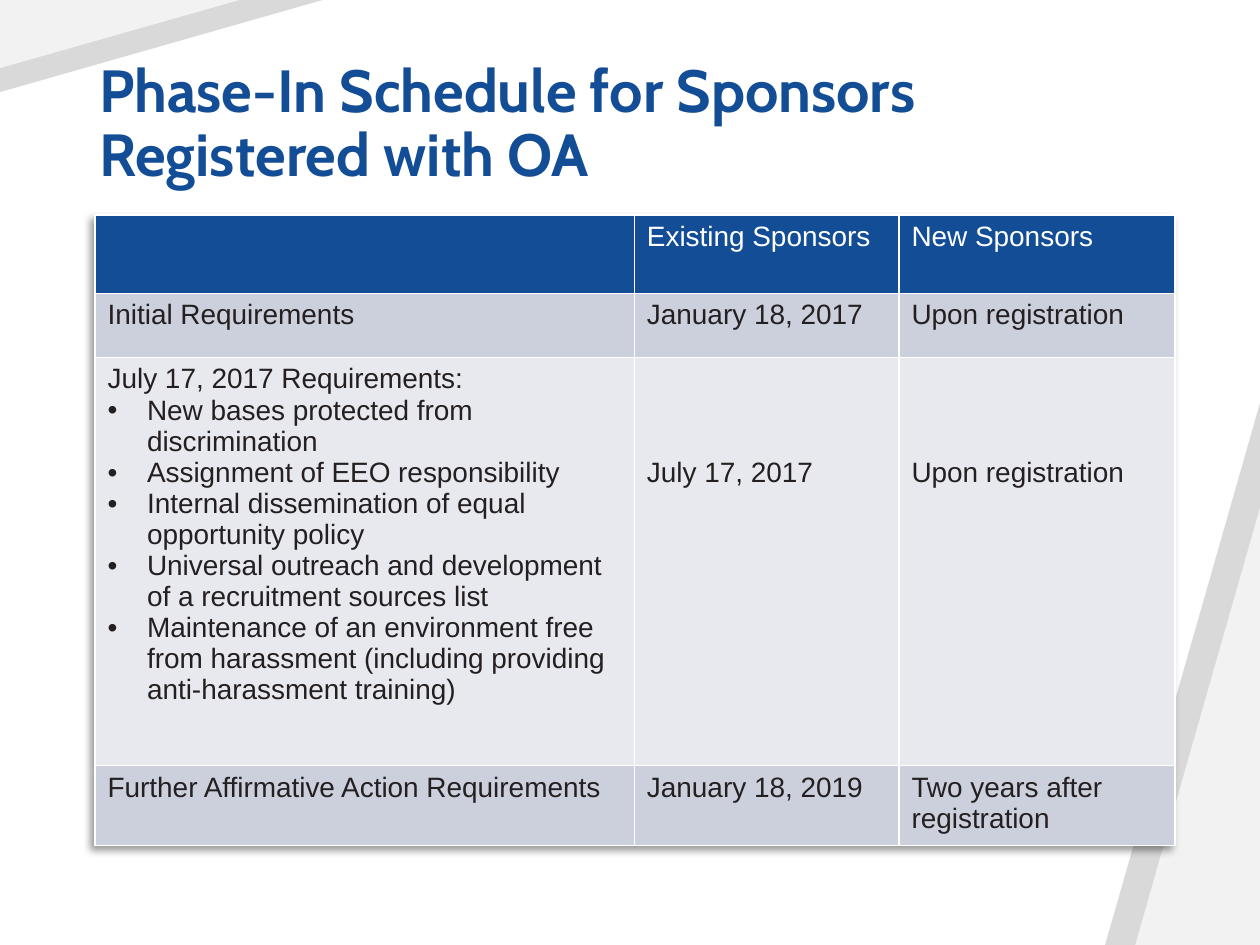
from typing import NamedTuple

from lxml.etree import SubElement as Sub
from pptx import Presentation
from pptx.dml.color import RGBColor
from pptx.enum.shapes import MSO_SHAPE as Kind
from pptx.enum.text import MSO_ANCHOR as Anchor
from pptx.oxml import parse_xml
from pptx.oxml.ns import nsdecls, qn
from pptx.util import Pt

WIDE, HIGH = 720, 540
BLUE, INK, WHITE = "124D95", "242021", "FFFFFF"


class Wedge(NamedTuple):
    """A right triangle filling the bottom right or, turned, the top left corner."""
    wide: float
    high: float
    fill: str
    turned: bool = False


class Row(NamedTuple):
    """A table row with its cell texts; drop lowers the text after column one."""
    high: float
    fill: str
    ink: str
    texts: tuple[str, str, str]
    points: tuple[str, ...] = ()
    drop: float = 0


WEDGES = [
    Wedge(88.5, 309.6, "D9D9D9"),
    Wedge(71.3, 249.8, "F2F2F2"),
    Wedge(184.3, 52.6, "D9D9D9", True),
    Wedge(136.8, 38.9, "F2F2F2", True),
]
COLS = [308.2, 151.2, 157.7]
ROWS = [
    Row(44.6, BLUE, WHITE, ("", "Existing Sponsors", "New Sponsors")),
    Row(36.7, "CCD0DD", INK,
        ("Initial Requirements", "January 18, 2017", "Upon registration")),
    Row(233.3, "E7E9EF", INK,
        ("July 17, 2017 Requirements:", "July 17, 2017", "Upon registration"),
        ("New bases protected from discrimination",
         "Assignment of EEO responsibility",
         "Internal dissemination of equal opportunity policy",
         "Universal outreach and development of a recruitment sources list",
         "Maintenance of an environment free from harassment "
         "(including providing anti-harassment training)"),
        53.4),
    Row(44.6, "CCD0DD", INK,
        ("Further Affirmative Action Requirements", "January 18, 2019",
         "Two years after registration")),
]


def paint(part, tint: str) -> None:
    if hasattr(part, "solid"):
        part.solid()
        part = part.fore_color
    part.rgb = RGBColor.from_string(tint)


def style(para, face: str, size: float, tint: str, bold: bool = False) -> None:
    font = para.font
    font.name, font.size, font.bold = face, Pt(size), bold
    paint(font.color, tint)


def draw_wedge(slide, wedge: Wedge) -> None:
    left, top = (0, 0) if wedge.turned else (WIDE - wedge.wide, HIGH - wedge.high)
    shape = slide.shapes.add_shape(
        Kind.ISOSCELES_TRIANGLE, Pt(left), Pt(top), Pt(wedge.wide), Pt(wedge.high))
    shape.adjustments[0] = 1
    shape.rotation = 180 if wedge.turned else 0
    shape.shadow.inherit = False
    paint(shape.fill, wedge.fill)
    shape.line.fill.background()


def draw_title(slide, text: str) -> None:
    frame = slide.shapes.add_textbox(Pt(49.7), Pt(28.8), Pt(626.4), Pt(82.8)).text_frame
    frame.word_wrap = True
    frame.vertical_anchor = Anchor.BOTTOM
    para = frame.paragraphs[0]
    para.text = text
    para.line_spacing = 0.9
    style(para, "Cabin", 34, BLUE, True)


def add_bullet(para) -> None:
    props = para._p.get_or_add_pPr()
    props.set("marL", str(Pt(22.5)))
    props.set("indent", str(-Pt(22.5)))
    Sub(props, qn("a:buFont"), typeface="Arial")
    Sub(props, qn("a:buChar"), char="•")


def add_edges(cell) -> None:
    props = cell._tc.get_or_add_tcPr()
    for side in ("lnL", "lnR", "lnT", "lnB"):
        line = Sub(props, qn(f"a:{side}"), w=str(Pt(1)))
        Sub(Sub(line, qn("a:solidFill")), qn("a:srgbClr"), val=WHITE)


def fill_cell(cell, row: Row, col: int) -> None:
    add_edges(cell)
    paint(cell.fill, row.fill)
    cell.margin_top = Pt(3.6 + (row.drop if col else 0))
    frame = cell.text_frame
    frame.text = row.texts[col]
    for point in () if col else row.points:
        para = frame.add_paragraph()
        para.text = point
        add_bullet(para)
    for para in frame.paragraphs:
        style(para, "Arial", 16, row.ink)


def add_shade(table) -> None:
    table._tbl.tblPr.insert(0, parse_xml(
        f'<a:effectLst {nsdecls("a")}>'
        f'<a:outerShdw blurRad="{Pt(4)}" dist="{Pt(3)}" dir="8100000" algn="tr" rotWithShape="0">'
        '<a:srgbClr val="000000"><a:alpha val="40000"/></a:srgbClr>'
        '</a:outerShdw></a:effectLst>'))


def draw_table(slide) -> None:
    table = slide.shapes.add_table(
        len(ROWS), len(COLS), Pt(54.3), Pt(123), Pt(sum(COLS)),
        Pt(sum(row.high for row in ROWS))).table
    add_shade(table)
    for col, wide in enumerate(COLS):
        table.columns[col].width = Pt(wide)
    for rank, row in enumerate(ROWS):
        table.rows[rank].height = Pt(row.high)
        for col in range(len(COLS)):
            fill_cell(table.cell(rank, col), row, col)


def main() -> None:
    """Build the phase-in schedule slide."""
    deck = Presentation()
    deck.slide_width, deck.slide_height = Pt(WIDE), Pt(HIGH)
    slide = deck.slides.add_slide(deck.slide_layouts[6])
    for wedge in WEDGES:
        draw_wedge(slide, wedge)
    draw_title(slide, "Phase-In Schedule for Sponsors Registered with OA")
    draw_table(slide)
    deck.save("out.pptx")


if __name__ == "__main__":
    main()
